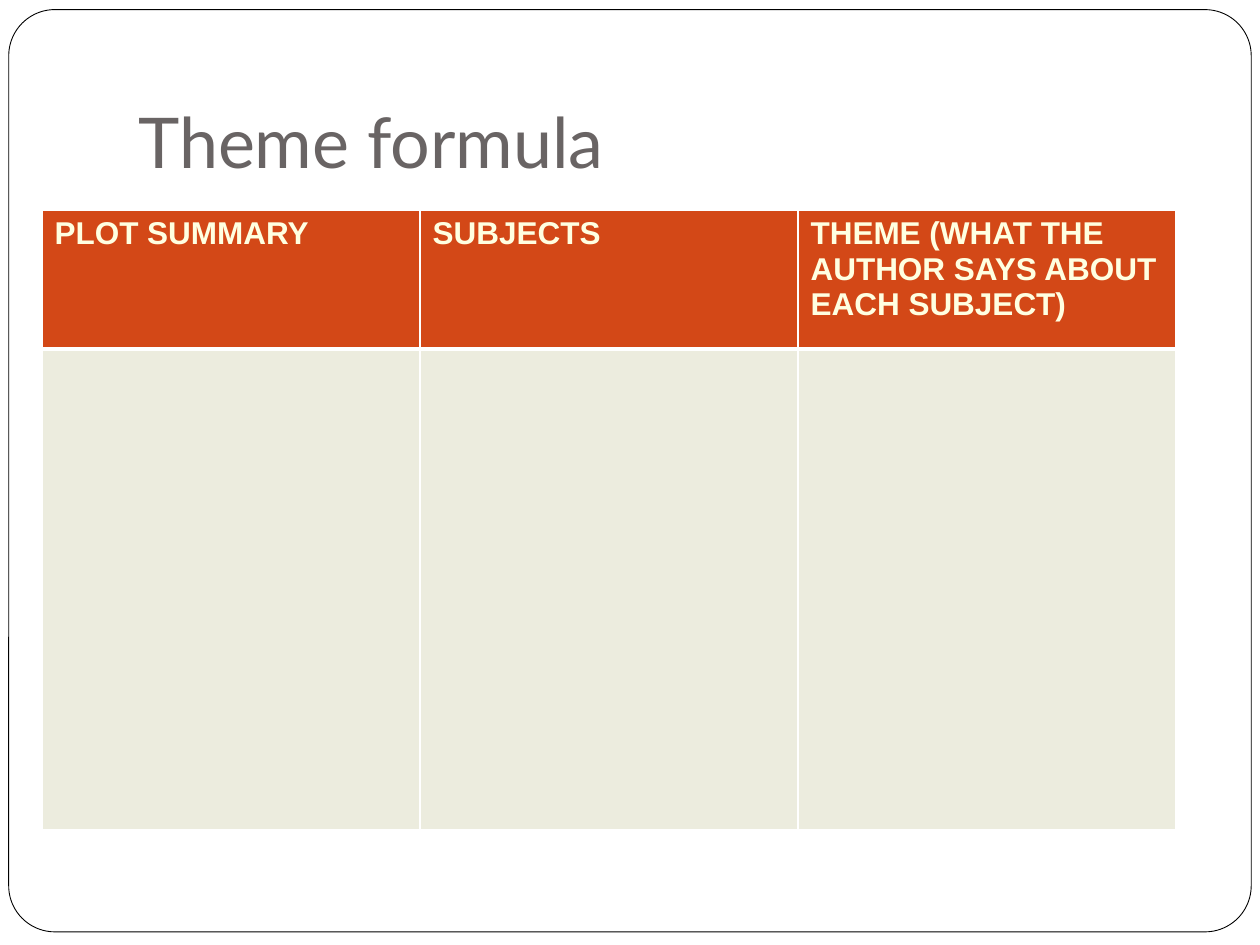
from dataclasses import dataclass

from lxml import etree
from pptx import Presentation
from pptx.dml.color import RGBColor
from pptx.enum.shapes import MSO_SHAPE
from pptx.enum.text import MSO_ANCHOR
from pptx.oxml.ns import qn
from pptx.util import Pt

ROUNDED = MSO_SHAPE.ROUNDED_RECTANGLE
BOTTOM = MSO_ANCHOR.BOTTOM


@dataclass(frozen=True)
class Theme:
    paper: str = "FFFFFF"
    outline: str = "000000"
    title: str = "696464"
    header_fill: str = "D34817"
    header_text: str = "FFFFE1"
    body_fill: str = "ECECDE"
    title_font: str = "Lato"
    table_font: str = "Arial"
    title_size: float = 40
    table_size: float = 18
    thin: float = 1
    thick: float = 3


THEME = Theme()
HEADERS = [
    "PLOT SUMMARY",
    "SUBJECTS",
    "THEME (WHAT THE AUTHOR SAYS ABOUT EACH SUBJECT)",
]


def rgb(value):
    return RGBColor.from_string(value)


def set_font(p, name, size, color, bold=False):
    p.font.name = name
    p.font.size = Pt(size)
    p.font.color.rgb = rgb(color)
    p.font.bold = bold


def set_borders(cell, color, left, right, top, bottom):
    tc_pr = cell._tc.get_or_add_tcPr()
    sides = {"lnL": left, "lnR": right, "lnT": top, "lnB": bottom}
    for tag, width in sides.items():
        ln = etree.SubElement(tc_pr, qn(f"a:{tag}"), w=str(Pt(width)))
        fill = etree.SubElement(ln, qn("a:solidFill"))
        etree.SubElement(fill, qn("a:srgbClr"), val=color)


def add_frame(slide, x, y, w, h):
    s = slide.shapes.add_shape(ROUNDED, Pt(x), Pt(y), Pt(w), Pt(h))
    s.adjustments[0] = 0.05
    s.shadow.inherit = False
    s.fill.solid()
    s.fill.fore_color.rgb = rgb(THEME.paper)
    s.line.color.rgb = rgb(THEME.outline)
    s.line.width = Pt(0.5)


def add_title(slide, text, x, y, w, h):
    tf = slide.shapes.add_textbox(Pt(x), Pt(y), Pt(w), Pt(h)).text_frame
    tf.word_wrap = True
    tf.vertical_anchor = BOTTOM
    tf.margin_bottom = Pt(7.2)
    p = tf.paragraphs[0]
    p.text = text
    set_font(p, THEME.title_font, THEME.title_size, THEME.title)


def add_formula_table(slide, headers, x, y, w, h, header_h):
    table = slide.shapes.add_table(
        2, len(headers), Pt(x), Pt(y), Pt(w), Pt(h)
    ).table
    table.rows[0].height = Pt(header_h)
    table.rows[1].height = Pt(h - header_h)
    thin, thick = THEME.thin, THEME.thick
    rows = [
        (headers, THEME.header_fill, thin, thick),
        ([""] * len(headers), THEME.body_fill, thick, thin),
    ]
    for row, (texts, fill, top, bottom) in enumerate(rows):
        for col, text in enumerate(texts):
            cell = table.cell(row, col)
            set_borders(cell, THEME.paper, thin, thin, top, bottom)
            cell.fill.solid()
            cell.fill.fore_color.rgb = rgb(fill)
            if text:
                p = cell.text_frame.paragraphs[0]
                p.text = text
                set_font(p, THEME.table_font, THEME.table_size,
                         THEME.header_text, bold=True)


def main():
    prs = Presentation()
    prs.slide_width, prs.slide_height = Pt(720), Pt(540)
    slide = prs.slides.add_slide(prs.slide_layouts[6])
    add_frame(slide, 5, 5.5, 710, 527)
    add_title(slide, "Theme formula", 72, 21.6, 612, 90)
    add_formula_table(slide, HEADERS, 24, 120, 648, 354, header_h=79.5)
    prs.save("out.pptx")


if __name__ == "__main__":
    main()
